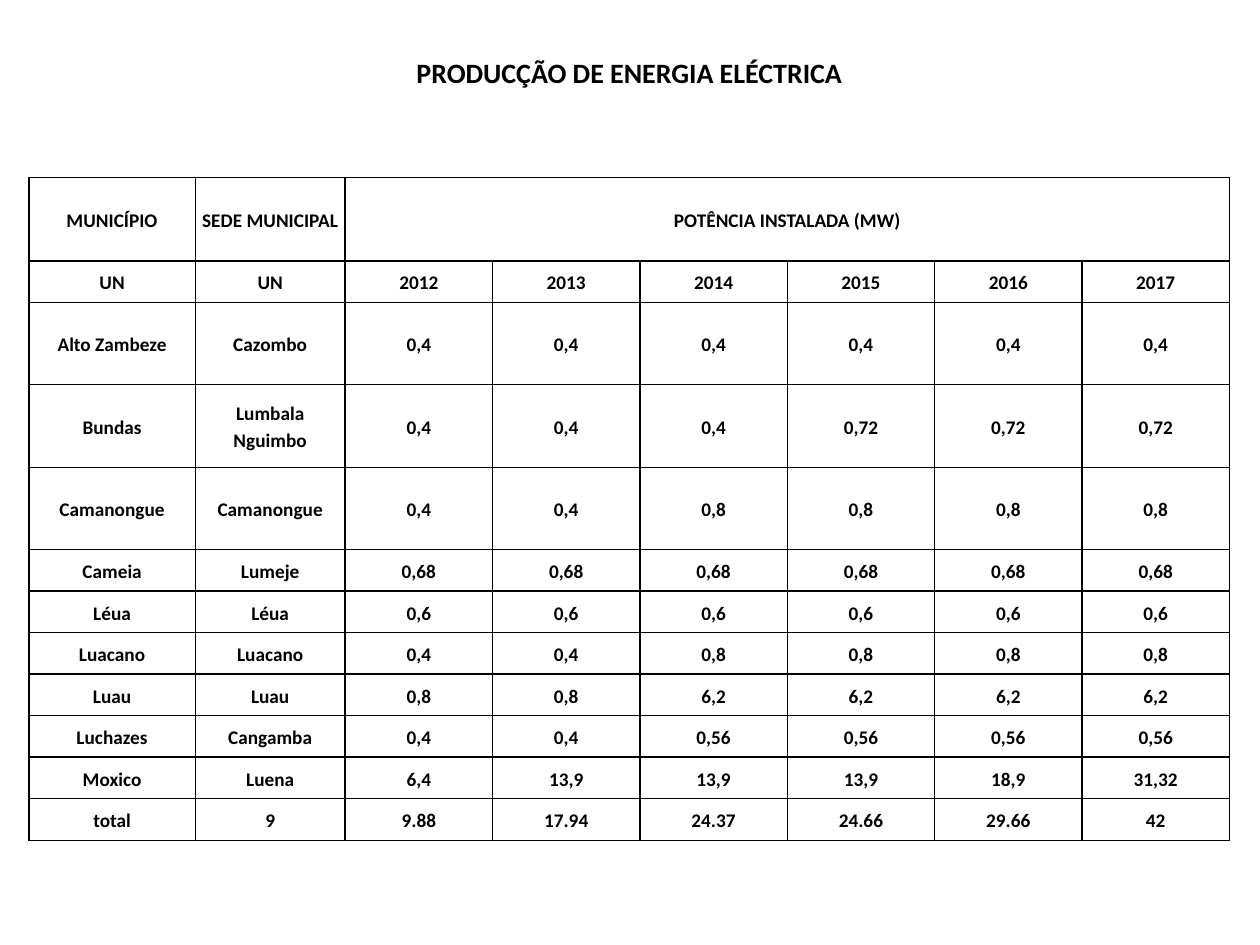
from pptx import Presentation
from pptx.dml.color import RGBColor
from pptx.enum.text import MSO_ANCHOR, PP_ALIGN
from pptx.oxml import parse_xml
from pptx.oxml.ns import nsdecls
from pptx.util import Inches, Pt

TITLE = "PRODUCÇÃO DE ENERGIA ELÉCTRICA"
ROWS = [
    ("MUNICÍPIO", "SEDE MUNICIPAL", "POTÊNCIA INSTALADA (MW)"),
    ("UN", "UN", "2012", "2013", "2014", "2015", "2016", "2017"),
    ("Alto Zambeze", "Cazombo", "0,4", "0,4", "0,4", "0,4", "0,4", "0,4"),
    ("Bundas", "Lumbala Nguimbo", "0,4", "0,4", "0,4", "0,72", "0,72", "0,72"),
    ("Camanongue", "Camanongue", "0,4", "0,4", "0,8", "0,8", "0,8", "0,8"),
    ("Cameia", "Lumeje", "0,68", "0,68", "0,68", "0,68", "0,68", "0,68"),
    ("Léua", "Léua", "0,6", "0,6", "0,6", "0,6", "0,6", "0,6"),
    ("Luacano", "Luacano", "0,4", "0,4", "0,8", "0,8", "0,8", "0,8"),
    ("Luau", "Luau", "0,8", "0,8", "6,2", "6,2", "6,2", "6,2"),
    ("Luchazes", "Cangamba", "0,4", "0,4", "0,56", "0,56", "0,56", "0,56"),
    ("Moxico", "Luena", "6,4", "13,9", "13,9", "13,9", "18,9", "31,32"),
    ("total", "9", "9.88", "17.94", "24.37", "24.66", "29.66", "42"),
]
COL_WIDTHS = [1.32, 1.19] + [1.17] * 6
ROW_HEIGHTS = [0.66, 0.33, 0.65, 0.66, 0.65] + [0.33] * 7
BLACK = "000000"


def color(value):
    return RGBColor.from_string(value)


def style_text(p, size):
    p.alignment = PP_ALIGN.CENTER
    for r in p.runs:
        r.font.name = "Calibri"
        r.font.size = Pt(size)
        r.font.bold = True
        r.font.color.rgb = color(BLACK)


def add_borders(cell):
    tcPr = cell._tc.get_or_add_tcPr()
    for i, side in enumerate(("lnL", "lnR", "lnT", "lnB")):
        tcPr.insert(i, parse_xml(
            f'<a:{side} {nsdecls("a")} w="{Pt(1)}"><a:solidFill>'
            f'<a:srgbClr val="{BLACK}"/></a:solidFill></a:{side}>'))


def add_title(s):
    tf = s.shapes.add_textbox(Inches(1.95), Inches(0.39), Inches(6.09), Inches(0.67)).text_frame
    tf.word_wrap = True
    tf.vertical_anchor = MSO_ANCHOR.TOP
    tf.text = TITLE
    style_text(tf.paragraphs[0], 16)


def add_power_table(s):
    table = s.shapes.add_table(
        len(ROWS), len(COL_WIDTHS), Inches(0.23), Inches(1.41),
        Inches(sum(COL_WIDTHS)), Inches(sum(ROW_HEIGHTS))).table
    table.first_row = table.horz_banding = False
    for column, width in zip(table.columns, COL_WIDTHS):
        column.width = Inches(width)
    for row, height in zip(table.rows, ROW_HEIGHTS):
        row.height = Inches(height)
    table.cell(0, 2).merge(table.cell(0, len(COL_WIDTHS) - 1))

    for cell in table.iter_cells():
        cell.fill.background()
        cell.margin_left = cell.margin_right = Inches(0.05)
        cell.margin_top = cell.margin_bottom = 0
        cell.vertical_anchor = MSO_ANCHOR.MIDDLE
        add_borders(cell)

    for i, texts in enumerate(ROWS):
        for j, text in enumerate(texts):
            tf = table.cell(i, j).text_frame
            tf.text = text
            p = tf.paragraphs[0]
            p.line_spacing = 1.15
            style_text(p, 11)


def main():
    prs = Presentation()
    prs.slide_width, prs.slide_height = Inches(10), Inches(7.5)
    s = prs.slides.add_slide(prs.slide_layouts[6])
    add_power_table(s)
    add_title(s)
    prs.save("out.pptx")


if __name__ == "__main__":
    main()
